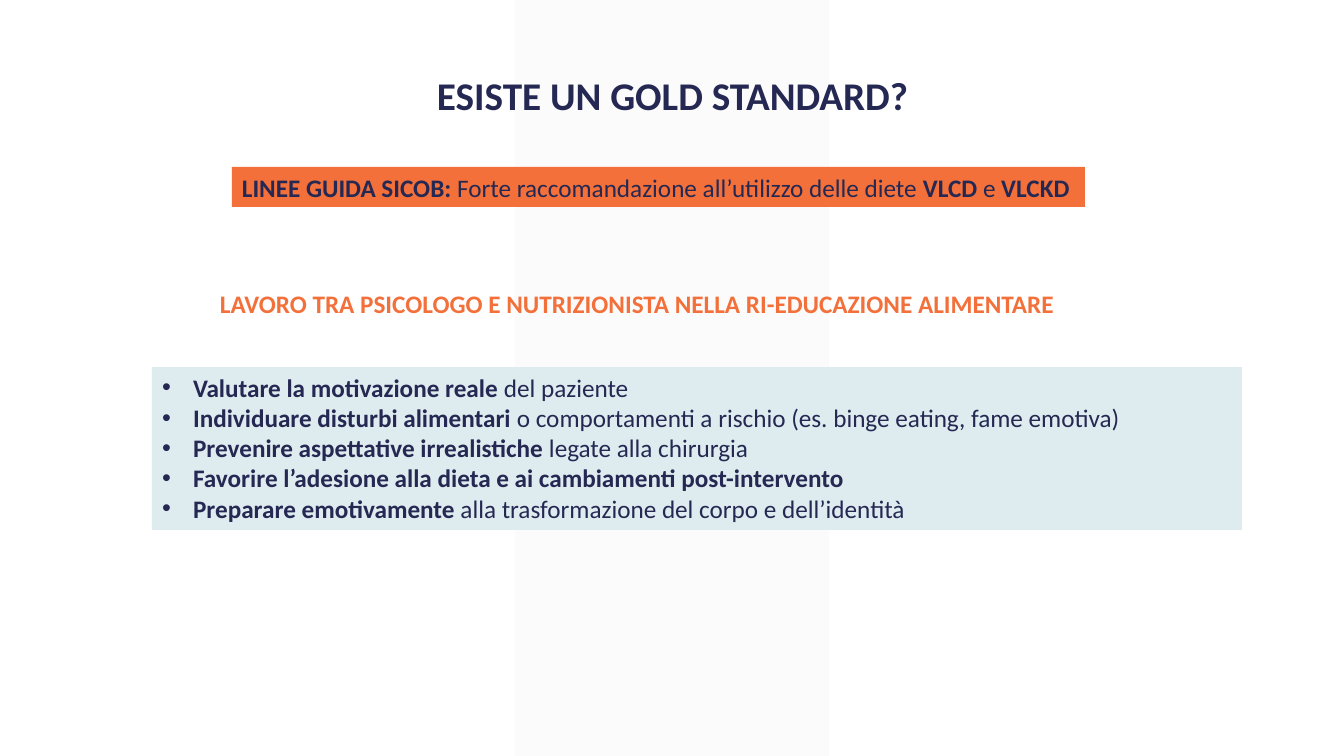
import pptx
import pptx.dml.color
import pptx.enum.shapes
import pptx.enum.text
import pptx.util
import lxml.etree
from dataclasses import dataclass

# Content: each paragraph is a list of (text, bold) runs
TITLE = [[("ESISTE UN GOLD STANDARD?", True)]]
GUIDELINE = [[
    ("LINEE GUIDA SICOB: ", True),
    ("Forte raccomandazione all’utilizzo delle diete ", False),
    ("VLCD ", True),
    ("e", False),
    (" VLCKD", True),
]]
HEADING = [[("LAVORO TRA PSICOLOGO E NUTRIZIONISTA NELLA RI-EDUCAZIONE ALIMENTARE", True)]]
GOALS = [
    [("Valutare la motivazione reale", True), (" del paziente", False)],
    [("Individuare disturbi alimentari", True),
     (" o comportamenti a rischio (es. binge eating, fame emotiva)", False)],
    [("Prevenire aspettative irrealistiche", True), (" legate alla chirurgia", False)],
    [("Favorire l’adesione alla dieta e ai cambiamenti post-intervento", True)],
    [("Preparare emotivamente", True), (" alla trasformazione del corpo e dell’identità", False)],
]

# Places in px: left, top, width, height
SLIDE_SIZE = (1344, 756)
BAND_BOX = (515, 0, 314, 756)
TITLE_BOX = (320, 66, 705, 57)
GUIDELINE_BOX = (232, 167, 853, 40)
HEADING_BOX = (210, 283, 1031, 40)
GOALS_BOX = (152, 367, 1090, 163)
BULLET_INDENT = 31


@dataclass(frozen=True)
class Theme:
    font: str = "Calibri"
    title_size: int = 28
    text_size: int = 18
    navy: str = "242852"
    orange: str = "F3703A"
    pale_blue: str = "DEECEF"
    band: str = "F2F2F2"
    band_opacity: int = 30


THEME = Theme()


def px(length):
    return pptx.util.Emu(round(length * 914400 / 100.8))


def color(value):
    return pptx.dml.color.RGBColor.from_string(value)


def place(shape, box):
    shape.left, shape.top, shape.width, shape.height = map(px, box)


def paint(shape, fill):
    shape.fill.solid()
    shape.fill.fore_color.rgb = color(fill)


def write(shape, paragraphs, size=THEME.text_size, ink=THEME.navy,
          align=pptx.enum.text.PP_ALIGN.LEFT, bullet_indent=0):
    frame = shape.text_frame
    frame.word_wrap = True
    frame.auto_size = pptx.enum.text.MSO_AUTO_SIZE.NONE
    frame.vertical_anchor = pptx.enum.text.MSO_ANCHOR.TOP
    for index, runs in enumerate(paragraphs):
        paragraph = frame.add_paragraph() if index else frame.paragraphs[0]
        paragraph.alignment = align
        paragraph.space_before = pptx.util.Pt(0)
        if bullet_indent:
            properties = paragraph._p.get_or_add_pPr()
            properties.set("marL", str(px(bullet_indent)))
            properties.set("indent", str(-px(bullet_indent)))
        for text, bold in runs:
            run = paragraph.add_run()
            run.text = text
            run.font.name = THEME.font
            run.font.size = pptx.util.Pt(size)
            run.font.bold = bold
            run.font.color.rgb = color(ink)


def add_band(slide):
    band = slide.shapes.add_shape(pptx.enum.shapes.MSO_SHAPE.RECTANGLE, *map(px, BAND_BOX))
    band.shadow.inherit = False
    band.line.fill.background()
    paint(band, THEME.band)
    # Make the fill translucent and send the band to the back
    tint = band._element.spPr.find(".//" + pptx.oxml.ns.qn("a:srgbClr"))
    alpha = lxml.etree.SubElement(tint, pptx.oxml.ns.qn("a:alpha"))
    alpha.set("val", str(THEME.band_opacity * 1000))
    slide.shapes._spTree.insert(2, band._element)


def main():
    presentation = pptx.Presentation()
    presentation.slide_width, presentation.slide_height = map(px, SLIDE_SIZE)
    slide = presentation.slides.add_slide(presentation.slide_layouts[1])
    add_band(slide)

    # Title
    title = slide.shapes.title
    place(title, TITLE_BOX)
    write(title, TITLE, size=THEME.title_size, align=pptx.enum.text.PP_ALIGN.CENTER)

    # Section heading
    heading = slide.shapes.add_textbox(*map(px, HEADING_BOX))
    write(heading, HEADING, ink=THEME.orange)

    # Bulleted goals
    goals = slide.placeholders[1]
    place(goals, GOALS_BOX)
    paint(goals, THEME.pale_blue)
    write(goals, GOALS, bullet_indent=BULLET_INDENT)

    # Guideline banner
    guideline = slide.shapes.add_textbox(*map(px, GUIDELINE_BOX))
    paint(guideline, THEME.orange)
    write(guideline, GUIDELINE)

    presentation.save("out.pptx")


if __name__ == "__main__":
    main()
